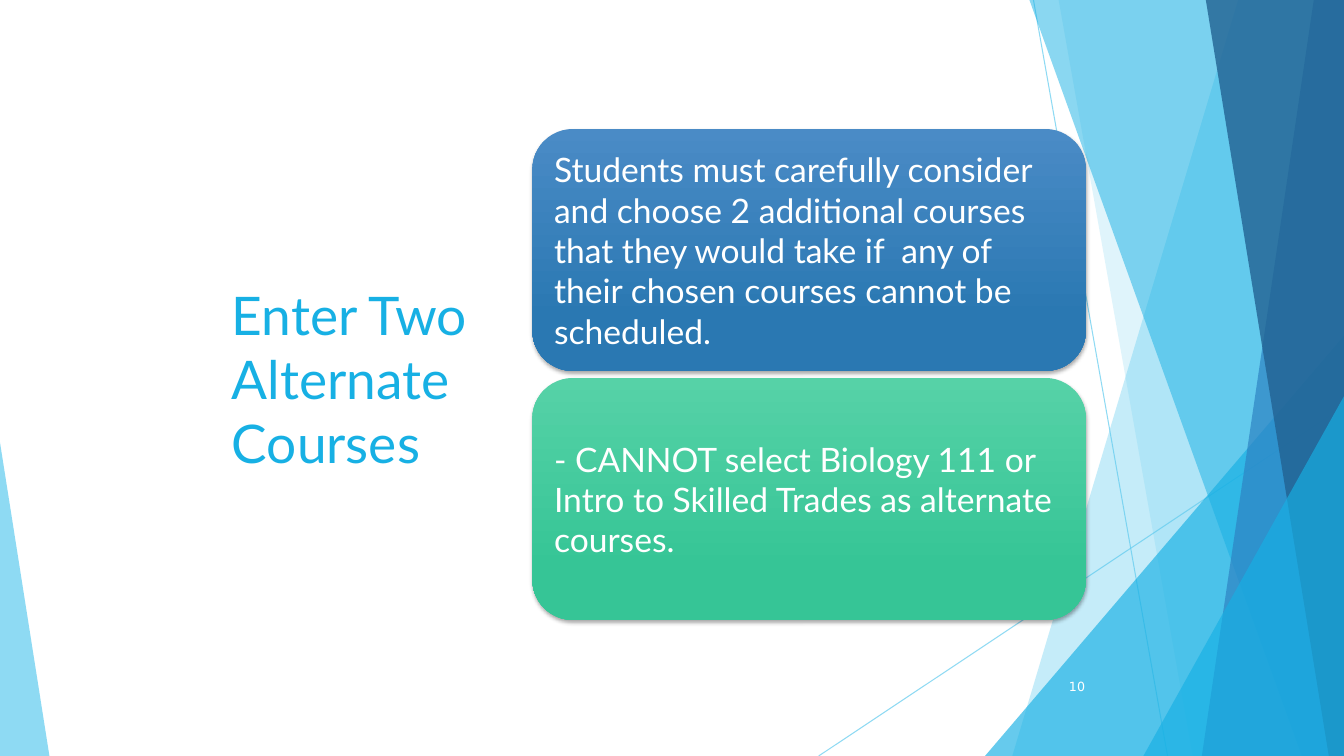
from lxml import etree
from pptx import Presentation
from pptx.dml.color import RGBColor
from pptx.enum.shapes import MSO_CONNECTOR, MSO_SHAPE
from pptx.enum.text import MSO_ANCHOR, PP_ALIGN
from pptx.oxml import parse_xml
from pptx.oxml.ns import nsdecls, qn
from pptx.util import Inches, Pt

WIDTH, HEIGHT = 13.33, 7.5

WHITE = RGBColor(0xFF, 0xFF, 0xFF)
SKY = RGBColor(0x5F, 0xCB, 0xEF)
CYAN = RGBColor(0x17, 0xB0, 0xE4)
BLUE = RGBColor(0x2E, 0x83, 0xC3)
NAVY = RGBColor(0x22, 0x62, 0x92)
BLUE_TOP = RGBColor(0x4A, 0x8B, 0xC6)
BLUE_BOTTOM = RGBColor(0x2A, 0x78, 0xB2)
GREEN_TOP = RGBColor(0x56, 0xD2, 0xA7)
GREEN_BOTTOM = RGBColor(0x36, 0xC5, 0x96)

# Bands reaching the right edge: left x at the top, left x at the bottom
BANDS_BEHIND = [(12.28, 10.04, SKY, 36), (10.5, 11.83, SKY, 20)]
BANDS_FRONT = [
    (10.21, 12.91, CYAN, 50),
    (13.03, 11.92, BLUE, 70),
    (11.96, 13.18, NAVY, 80),
]

CARDS = [
    ("Students must carefully consider and choose 2 additional courses "
     "that they would take if  any of their chosen courses cannot be scheduled.",
     BLUE_TOP, BLUE_BOTTOM),
    ("- CANNOT select Biology 111 or Intro to Skilled Trades as alternate courses.",
     GREEN_TOP, GREEN_BOTTOM),
]
CARD_LEFT, CARD_TOP, CARD_WIDTH, CARD_HEIGHT = 5.28, 1.28, 5.49, 2.4
CARD_STEP = 2.47


def set_opacity(color_parent, percent):
    color = next(color_parent.iter(qn("a:srgbClr")))
    etree.SubElement(color, qn("a:alpha"), val=str(percent * 1000))


def paint(shape, color, opacity):
    shape.shadow.inherit = False
    shape.fill.solid()
    shape.fill.fore_color.rgb = color
    set_opacity(shape._element.spPr.find(qn("a:solidFill")), opacity)
    shape.line.fill.background()


def add_thin_line(page, start, end):
    line = page.shapes.add_connector(
        MSO_CONNECTOR.STRAIGHT, *[Inches(value) for value in (*start, *end)])
    line.line.color.rgb = SKY
    line.line.width = Pt(0.75)
    properties = line._element.spPr
    set_opacity(properties, 70)
    etree.SubElement(properties, qn("a:effectLst"))


def add_band(page, top_x, bottom_x, color, opacity):
    corners = [(WIDTH, 0), (WIDTH, HEIGHT), (bottom_x, HEIGHT)]
    builder = page.shapes.build_freeform(Inches(top_x), 0)
    builder.add_line_segments([(Inches(x), Inches(y)) for x, y in corners])
    paint(builder.convert_to_shape(), color, opacity)


def add_triangle(page, left, top, width, apex, color, opacity):
    triangle = page.shapes.add_shape(
        MSO_SHAPE.ISOSCELES_TRIANGLE,
        Inches(left), Inches(top), Inches(width), Inches(HEIGHT - top))
    triangle.adjustments[0] = apex
    paint(triangle, color, opacity)


def write_text(shape, text, size, font, color, align=PP_ALIGN.LEFT):
    frame = shape.text_frame
    frame.word_wrap = True
    frame.vertical_anchor = MSO_ANCHOR.MIDDLE
    frame.text = text
    para = frame.paragraphs[0]
    para.alignment = align
    span = para.runs[0]
    span.font.size = Pt(size)
    span.font.name = font
    span.font.color.rgb = color
    return frame


def add_text(page, left, top, width, height, *style):
    box = page.shapes.add_textbox(
        Inches(left), Inches(top), Inches(width), Inches(height))
    write_text(box, *style)


def add_card(page, top, text, top_color, bottom_color):
    card = page.shapes.add_shape(
        MSO_SHAPE.ROUNDED_RECTANGLE, Inches(CARD_LEFT), Inches(top),
        Inches(CARD_WIDTH), Inches(CARD_HEIGHT))
    card.line.fill.background()

    # Vertical gradient
    card.fill.gradient()
    card.fill.gradient_angle = 270
    stops = zip(card.fill.gradient_stops, (0, 0.78), (top_color, bottom_color))
    for stop, position, color in stops:
        stop.position = position
        stop.color.rgb = color

    # Soft shadow below the card
    card._element.spPr.append(parse_xml(
        f'<a:effectLst {nsdecls("a")}>'
        f'<a:outerShdw blurRad="{Pt(3)}" dist="{Pt(2)}" dir="5400000" rotWithShape="0">'
        '<a:srgbClr val="000000"><a:alpha val="35000"/></a:srgbClr>'
        '</a:outerShdw></a:effectLst>'))

    frame = write_text(card, text, 24, "Lato", WHITE)
    frame.margin_left = frame.margin_right = Inches(0.1)
    frame.margin_top = frame.margin_bottom = Inches(0.1)


def add_backdrop(page):
    add_thin_line(page, (10.25, 0), (11.58, HEIGHT))
    add_thin_line(page, (WIDTH, 4.03), (8.12, HEIGHT))
    for band in BANDS_BEHIND:
        add_band(page, *band)
    add_triangle(page, 9.77, 3.33, 3.56, 1, CYAN, 66)
    for band in BANDS_FRONT:
        add_band(page, *band)
    add_triangle(page, 11.34, 3.93, 1.99, 1, CYAN, 66)
    add_triangle(page, 0, 4.39, 0.49, 0, SKY, 70)


def main():
    deck = Presentation()
    deck.slide_width = Inches(WIDTH)
    deck.slide_height = Inches(HEIGHT)
    page = deck.slides.add_slide(deck.slide_layouts[6])

    add_backdrop(page)

    # Title and page number
    add_text(page, 2.2, 1.51, 2.91, 4.48,
             "Enter Two Alternate Courses", 38, "Lato", CYAN)
    add_text(page, 10.3, 6.61, 0.56, 0.4,
             "10", 9, "DejaVu Sans", WHITE, PP_ALIGN.RIGHT)

    # Stacked cards
    for index, card in enumerate(CARDS):
        add_card(page, CARD_TOP + index * CARD_STEP, *card)

    deck.save("out.pptx")


if __name__ == "__main__":
    main()
